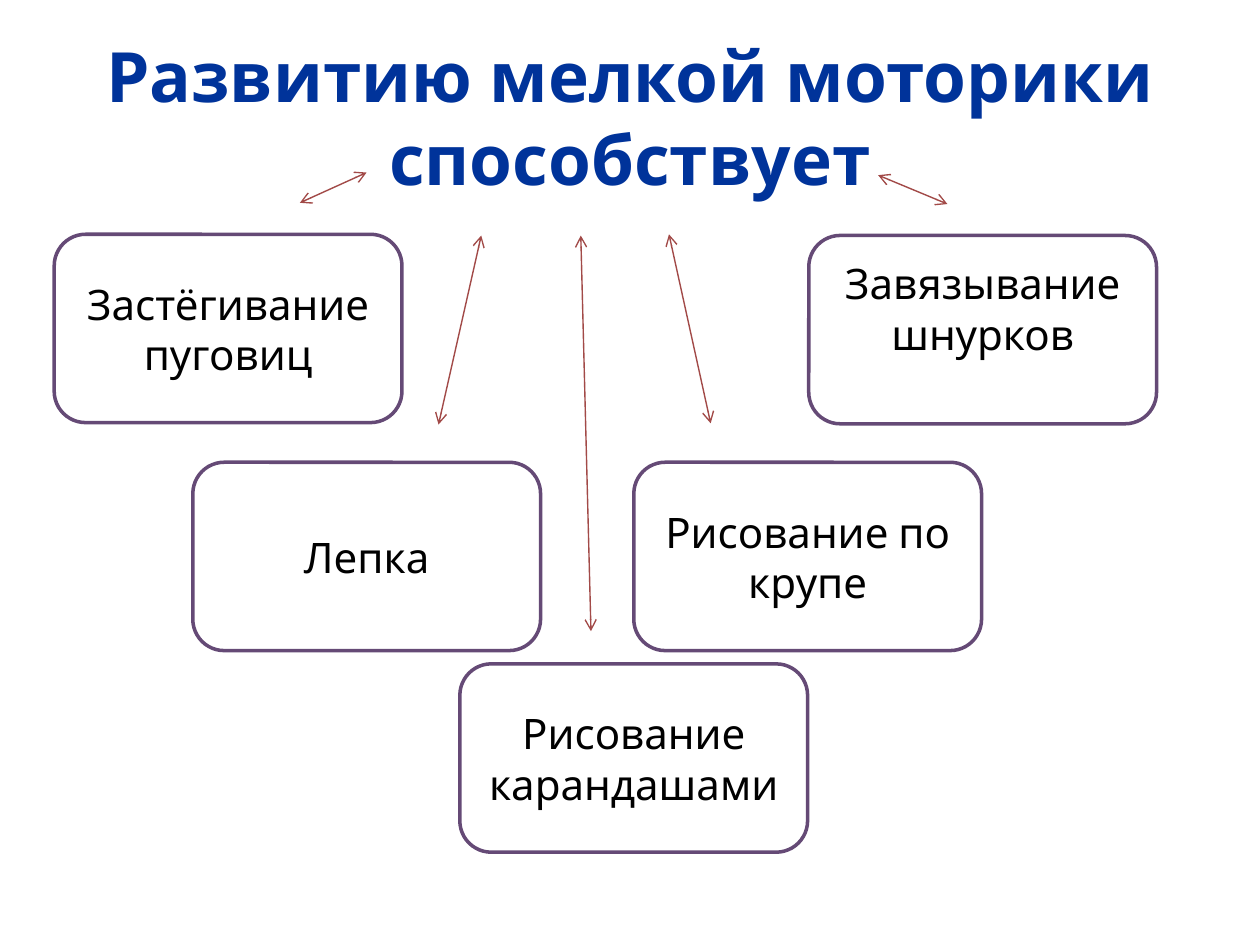
from lxml import etree
from pptx import Presentation
from pptx.dml.color import RGBColor
from pptx.enum.shapes import MSO_CONNECTOR, MSO_SHAPE
from pptx.enum.text import MSO_ANCHOR, PP_ALIGN
from pptx.oxml.ns import qn
from pptx.util import Pt

STRAIGHT = MSO_CONNECTOR.STRAIGHT
ROUNDED = MSO_SHAPE.ROUNDED_RECTANGLE
MIDDLE = MSO_ANCHOR.MIDDLE
CENTER = PP_ALIGN.CENTER
TITLE_ONLY = 5

BOX_WIDTH, BOX_HEIGHT = 198.7, 107.6
# text, left, top, bottom inset
ACTIVITIES = [
    ("Застёгивание пуговиц", 31, 133.9, 3.6),
    ("Лепка", 110.2, 264.2, 3.6),
    ("Завязывание шнурков", 462.2, 134.6, 28.1),
    ("Рисование по крупе", 362.2, 264.2, 3.6),
    ("Рисование карандашами", 262.8, 379.4, 3.6),
]
# start x, start y, end x, end y
ARROWS = [
    (501.8, 100.1, 541.4, 116.6),
    (209.5, 98.6, 171.4, 115.9),
    (382.3, 133.9, 406.1, 241.9),
    (275, 134.6, 250.6, 242.6),
    (331.9, 134.6, 337.7, 360.7),
]


def color(value):
    return RGBColor.from_string(value)


def write_centered(text_frame, text, font_format, font_color):
    text_frame.word_wrap = True
    text_frame.vertical_anchor = MIDDLE
    paragraph = text_frame.paragraphs[0]
    paragraph.alignment = CENTER
    run = paragraph.add_run()
    run.text = text
    for name, value in font_format.items():
        setattr(run.font, name, value)
    run.font.color.rgb = color(font_color)


presentation = Presentation()
presentation.slide_width, presentation.slide_height = Pt(720), Pt(540)
slide = presentation.slides.add_slide(presentation.slide_layouts[TITLE_ONLY])

title = slide.shapes.title
title.left, title.top, title.width, title.height = Pt(36), Pt(21.6), Pt(648), Pt(90)
title_format = {"name": "Karla", "size": Pt(39.6), "bold": True}
write_centered(title.text_frame, "Развитию мелкой моторики способствует", title_format, "00339A")

box_format = {"name": "Karla", "size": Pt(24)}
for text, left, top, bottom_inset in ACTIVITIES:
    box = slide.shapes.add_shape(ROUNDED, Pt(left), Pt(top), Pt(BOX_WIDTH), Pt(BOX_HEIGHT))
    box.shadow.inherit = False
    box.fill.solid()
    box.fill.fore_color.rgb = color("FFFFFF")
    box.line.color.rgb = color("654A76")
    box.line.width = Pt(2)
    box.text_frame.margin_bottom = Pt(bottom_inset)
    write_centered(box.text_frame, text, box_format, "000000")

for points in ARROWS:
    arrow = slide.shapes.add_connector(STRAIGHT, *[Pt(value) for value in points])
    arrow.line.color.rgb = color("A24A48")
    arrow.line.width = Pt(0.79)
    for end in ("a:headEnd", "a:tailEnd"):
        etree.SubElement(arrow.line._get_or_add_ln(), qn(end), type="arrow")
    etree.SubElement(arrow._element.spPr, qn("a:effectLst"))

presentation.save("out.pptx")
